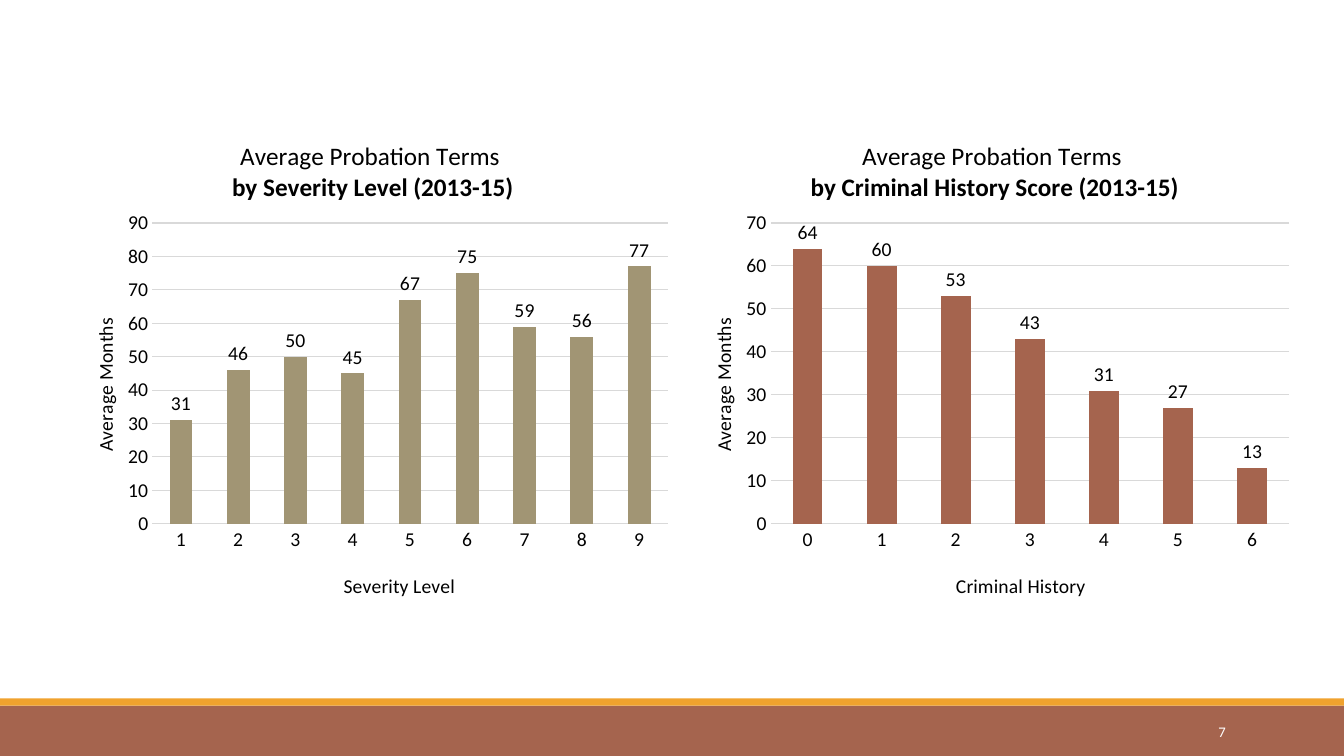
from dataclasses import dataclass

from lxml.etree import SubElement
from pptx import Presentation
from pptx.chart.data import CategoryChartData as Data
from pptx.dml.color import RGBColor as Rgb
from pptx.enum.chart import XL_CHART_TYPE as Kind
from pptx.enum.chart import XL_LABEL_POSITION as Spot
from pptx.enum.chart import XL_TICK_MARK as Tick
from pptx.enum.shapes import MSO_SHAPE as Form
from pptx.enum.text import MSO_ANCHOR as Anchor
from pptx.enum.text import PP_ALIGN as Align
from pptx.oxml.ns import qn
from pptx.oxml.xmlchemy import OxmlElement as Node
from pptx.util import Cm, Pt


@dataclass(frozen=True)
class Theme:
    font: str = "Calibri"
    black: str = "000000"
    white: str = "FFFFFF"
    rust: str = "A5644E"
    gold: str = "F0A22E"
    olive: str = "A19574"
    grid: str = "D9D9D9"
    head: float = 18
    label: float = 14
    base: float = 10
    page: float = 10.5


@dataclass(frozen=True)
class Bar:
    top: float
    high: float
    color: str


@dataclass(frozen=True)
class Panel:
    left: float
    wide: float
    topic: str
    axis: str
    first: int
    vals: tuple[int, ...]
    peak: int
    color: str
    head: float
    foot: float


LOOK = Theme()
WIDE, HIGH = 33.87, 19.05
TOP, TALL = 2.92, 12.6
BARS = (Bar(17.78, 1.27, LOOK.rust), Bar(17.6, 0.18, LOOK.gold))
PANELS = (
    Panel(1.57, 15.57, "Severity Level", "Severity Level", 1,
          (31, 46, 50, 45, 67, 75, 59, 56, 77), 90, LOOK.olive, 4.2, 7.0),
    Panel(17.15, 15.65, "Criminal History Score", "Criminal History", 0,
          (64, 60, 53, 43, 31, 27, 13), 70, LOOK.rust, 3.2, 6.85),
)


def style(font, size: float, color: str = LOOK.black, bold: bool = False) -> None:
    """Set the face, size, colour and weight of a font."""
    font.name, font.size, font.bold = LOOK.font, Pt(size), bold
    font.color.rgb = Rgb.from_string(color)


def write(para, text: str, size: float, color: str = LOOK.black, bold: bool = False) -> None:
    """Add one styled run to a paragraph."""
    run = para.add_run()
    run.text = text
    style(run.font, size, color, bold)


def place(node, index: int, panel: Panel, x: float, y: float,
          wide: float = 0, high: float = 0) -> None:
    """Fix a chart part at centimetres from the chart's corner."""
    for old in node.findall(qn("c:layout")):
        node.remove(old)
    layout = Node("c:layout")
    manual = SubElement(layout, qn("c:manualLayout"))
    parts = {"xMode": "edge", "yMode": "edge", "x": x / panel.wide, "y": y / TALL}
    if wide:
        parts = {"layoutTarget": "inner", **parts,
                 "w": wide / panel.wide, "h": high / TALL}
    for name, val in parts.items():
        SubElement(manual, qn(f"c:{name}")).set("val", str(val))
    node.insert(index, layout)


def dress(axis, text: str, panel: Panel, x: float, y: float, turn: int = 0) -> None:
    """Style an axis and place its title."""
    axis.major_tick_mark = axis.minor_tick_mark = Tick.NONE
    axis.format.line.fill.background()
    style(axis.tick_labels.font, LOOK.label)
    title = axis.axis_title
    write(title.text_frame.paragraphs[0], text, LOOK.label)
    title.element.find(".//" + qn("a:bodyPr")).set("rot", str(turn * 60000))
    place(title.element, 1, panel, x, y)


def plot(slide, panel: Panel) -> None:
    """Draw one column chart."""
    data = Data(number_format="0")
    data.categories = [str(panel.first + i) for i in range(len(panel.vals))]
    data.add_series("Series 1", panel.vals)
    chart = slide.shapes.add_chart(
        Kind.COLUMN_CLUSTERED, Cm(panel.left), Cm(TOP), Cm(panel.wide), Cm(TALL), data).chart
    style(chart.font, LOOK.base)
    chart.has_legend = False

    title = chart.chart_title
    frame = title.text_frame
    write(frame.paragraphs[0], "Average Probation Terms ", LOOK.head)
    write(frame.add_paragraph(), f"by {panel.topic} (2013-15)", LOOK.head, bold=True)
    title.include_in_layout = False
    place(title.element, 1, panel, panel.head, 0.52)

    dress(chart.category_axis, panel.axis, panel, panel.foot, 11.4)
    scale = chart.value_axis
    dress(scale, "Average Months", panel, 0.65, 5, -90)
    scale.minimum_scale, scale.maximum_scale, scale.major_unit = 0, panel.peak, 10
    scale.tick_labels.number_format = "0"
    scale.tick_labels.number_format_is_linked = False
    line = scale.major_gridlines.format.line
    line.width = Pt(0.75)
    line.color.rgb = Rgb.from_string(LOOK.grid)

    group = chart.plots[0]
    group.gap_width, group.vary_by_categories = 150, False
    fill = group.series[0].format.fill
    fill.solid()
    fill.fore_color.rgb = Rgb.from_string(panel.color)
    group.has_data_labels = True
    labels = group.data_labels
    labels.show_value, labels.position = True, Spot.OUTSIDE_END
    labels.number_format, labels.number_format_is_linked = "0", False
    style(labels.font, LOOK.label)
    area = chart.element.find(".//" + qn("c:plotArea"))
    place(area, 0, panel, 2.27, 2.7, panel.wide - 2.58, 7.58)


def band(slide, bar: Bar) -> None:
    """Draw one full-width footer bar."""
    shape = slide.shapes.add_shape(Form.RECTANGLE, 0, Cm(bar.top), Cm(WIDE), Cm(bar.high))
    shape.shadow.inherit = False
    shape.fill.solid()
    shape.fill.fore_color.rgb = Rgb.from_string(bar.color)
    shape.line.fill.background()


def number(slide) -> None:
    """Write the page number in the footer."""
    frame = slide.shapes.add_textbox(Cm(27.51), Cm(17.93), Cm(3.63), Cm(1.02)).text_frame
    frame.word_wrap, frame.vertical_anchor = True, Anchor.MIDDLE
    para = frame.paragraphs[0]
    para.alignment = Align.RIGHT
    write(para, "7", LOOK.page, LOOK.white)


def main() -> None:
    """Build and save the slide."""
    deck = Presentation()
    deck.slide_width, deck.slide_height = Cm(WIDE), Cm(HIGH)
    slide = deck.slides.add_slide(deck.slide_layouts[6])
    for bar in BARS:
        band(slide, bar)
    for panel in PANELS:
        plot(slide, panel)
    number(slide)
    deck.save("out.pptx")


if __name__ == "__main__":
    main()
